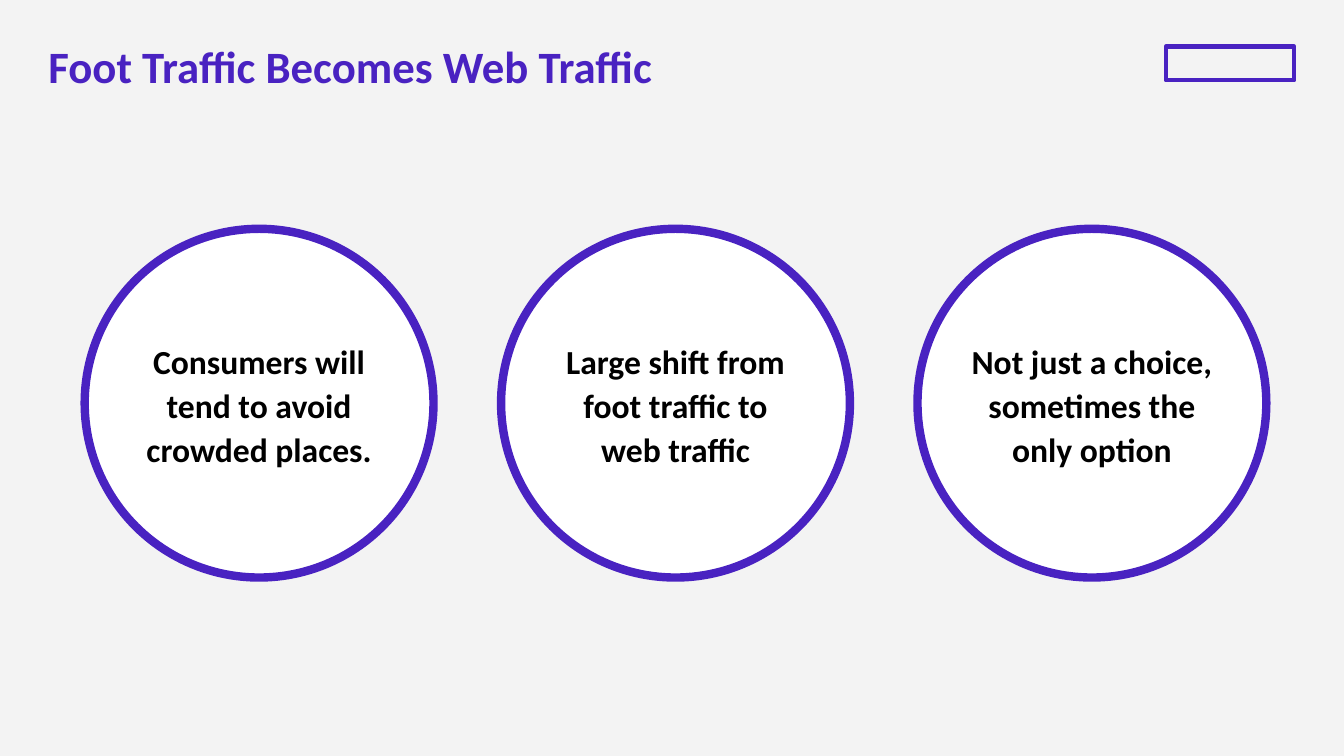
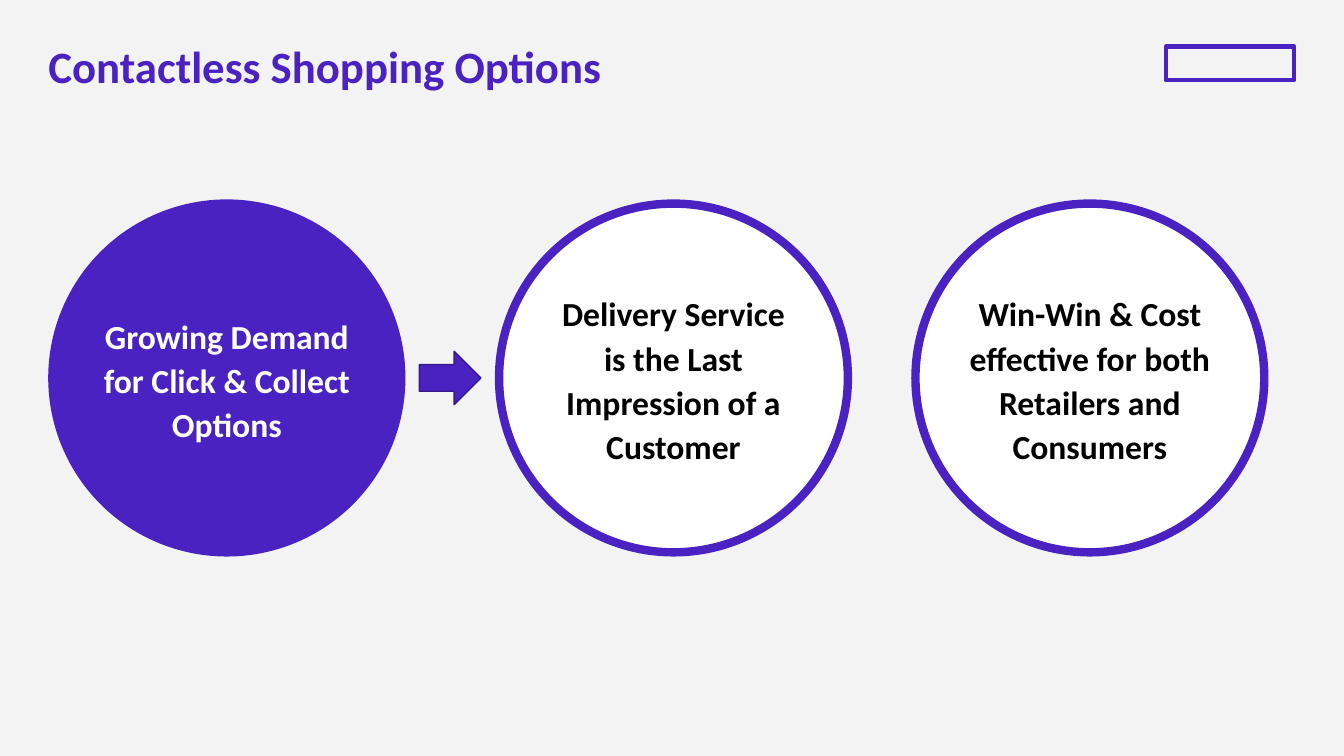
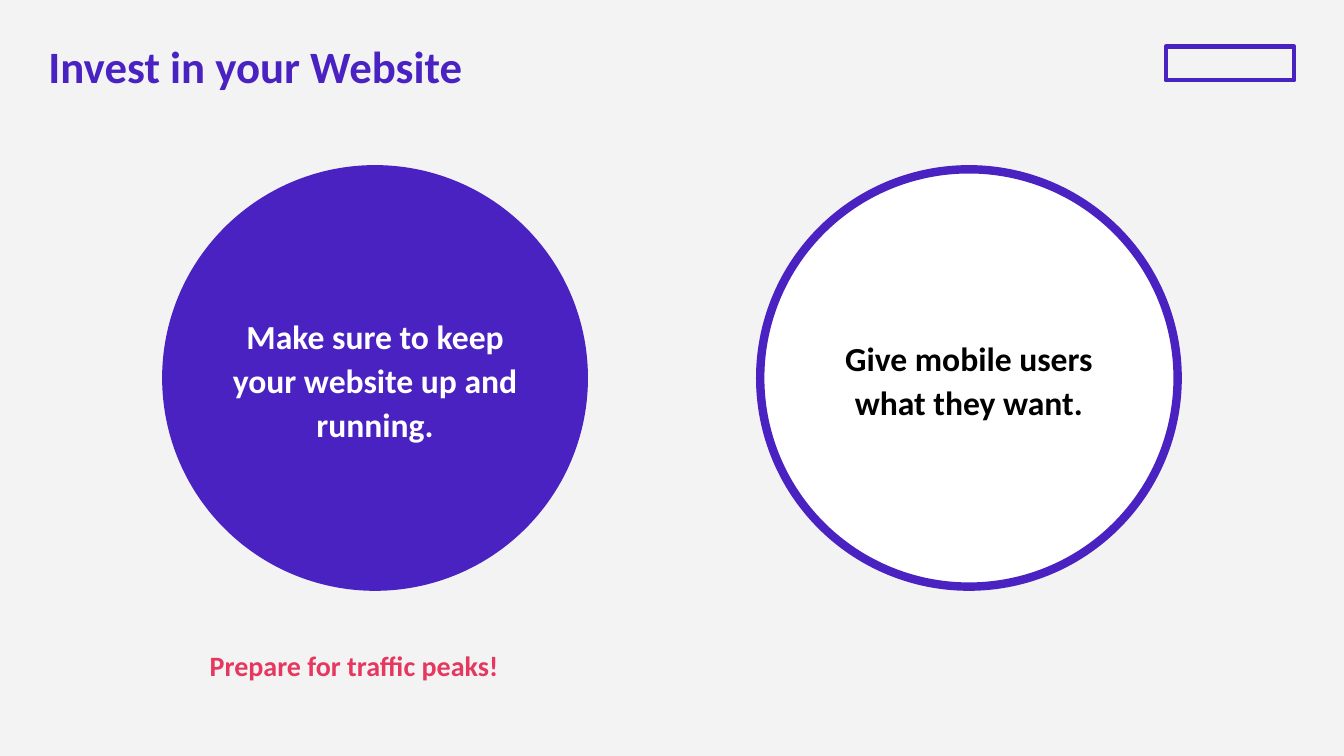
from pptx import Presentation
from pptx.dml.color import RGBColor
from pptx.enum.shapes import MSO_SHAPE
from pptx.enum.text import MSO_ANCHOR, MSO_AUTO_SIZE, PP_ALIGN
from pptx.util import Inches, Pt

WIDE, HIGH = 13.33, 7.5
MID = HIGH / 2
STEP = 4.13  # distance between the centres of neighbouring discs
SMALL, LARGE = 3.46, 4.14  # disc diameters
FONT = "Calibri"
HUES = {
    "back": "F3F3F3",
    "main": "4922C1",
    "edge": "36198F",
    "note": "E6375F",
    "dark": "000000",
    "light": "FFFFFF",
}


def tint(name):
    return RGBColor.from_string(HUES[name])


def write(shape, text, size, hue, space, align=PP_ALIGN.LEFT,
          anchor=MSO_ANCHOR.TOP):
    """Fill a shape with one bold paragraph and no insets."""
    frame = shape.text_frame
    frame.text = text
    frame.word_wrap = True
    frame.auto_size = MSO_AUTO_SIZE.NONE
    frame.vertical_anchor = anchor
    frame.margin_left = frame.margin_right = 0
    frame.margin_top = frame.margin_bottom = 0
    para = frame.paragraphs[0]
    para.alignment = align
    para.line_spacing = space
    para.space_before = Pt(0)
    font = para.runs[0].font
    font.name, font.size, font.bold = FONT, Pt(size), True
    font.color.rgb = tint(hue)


def draw(slide, kind, mid, size, fill, line, weight):
    """Add a preset shape around its centre point."""
    (x, y), (wide, high) = mid, size
    shape = slide.shapes.add_shape(
        kind, Inches(x - wide / 2), Inches(y - high / 2),
        Inches(wide), Inches(high))
    shape.shadow.inherit = False
    if fill:
        shape.fill.solid()
        shape.fill.fore_color.rgb = tint(fill)
    else:
        shape.fill.background()
    shape.line.color.rgb = tint(line)
    shape.line.width = Pt(weight)
    return shape


def disc(slide, x, y, size, text, solid=False):
    fill, hue = ("main", "light") if solid else ("light", "dark")
    shape = draw(slide, MSO_SHAPE.OVAL, (x, y), (size, size), fill, "main", 6)
    write(shape, text, 24, hue, 1.1, PP_ALIGN.CENTER, MSO_ANCHOR.MIDDLE)


def start(deck, title):
    """Add a slide with its title and corner badge."""
    slide = deck.slides.add_slide(deck.slide_layouts[5])
    head = slide.shapes.title
    head.left, head.top = Inches(0.48), Inches(0.44)
    head.width, head.height = Inches(10.62), Inches(1.06)
    write(head, title, 32, "main", 0.9)
    draw(slide, MSO_SHAPE.RECTANGLE, (12.2, 0.63), (1.27, 0.33),
         None, "main", 3.5)
    return slide


def shift(deck):
    slide = start(deck, "Foot Traffic Becomes Web Traffic")
    texts = ["Consumers will tend to avoid crowded places.",
             "Large shift from foot traffic to web traffic",
             "Not just a choice, sometimes the only option"]
    for col, text in enumerate(texts):
        disc(slide, 2.57 + col * STEP, 4, SMALL, text)


def options(deck):
    slide = start(deck, "Contactless Shopping Options")
    first, second = 2.25, 6.68
    disc(slide, first, MID, SMALL,
         "Growing Demand for Click & Collect Options", True)
    texts = ["Delivery Service is the Last Impression of a Customer",
             "Win-Win & Cost effective for both Retailers and Consumers"]
    for col, text in enumerate(texts):
        disc(slide, second + col * STEP, MID, SMALL, text)
    # Arrow halfway between the first two discs
    draw(slide, MSO_SHAPE.RIGHT_ARROW, ((first + second) / 2, MID),
         (0.61, 0.53), "main", "edge", 1)


def invest(deck):
    slide = start(deck, "Invest in your Website")
    left = 1.65 + LARGE / 2
    disc(slide, left, MID, LARGE,
         "Make sure to keep your website up and running.", True)
    disc(slide, WIDE - left, MID, LARGE, "Give mobile users what they want.")
    # Call to action
    note = slide.shapes.add_textbox(
        Inches(2.08), Inches(6.5), Inches(3.28), Inches(1))
    write(note, "Prepare for traffic peaks!", 20, "note", 0.8)


def main():
    deck = Presentation()
    deck.slide_width, deck.slide_height = Inches(WIDE), Inches(HIGH)
    # Shared background
    fill = deck.slide_master.background.fill
    fill.solid()
    fill.fore_color.rgb = tint("back")
    for build in (shift, options, invest):
        build(deck)
    deck.save("out.pptx")


if __name__ == "__main__":
    main()
